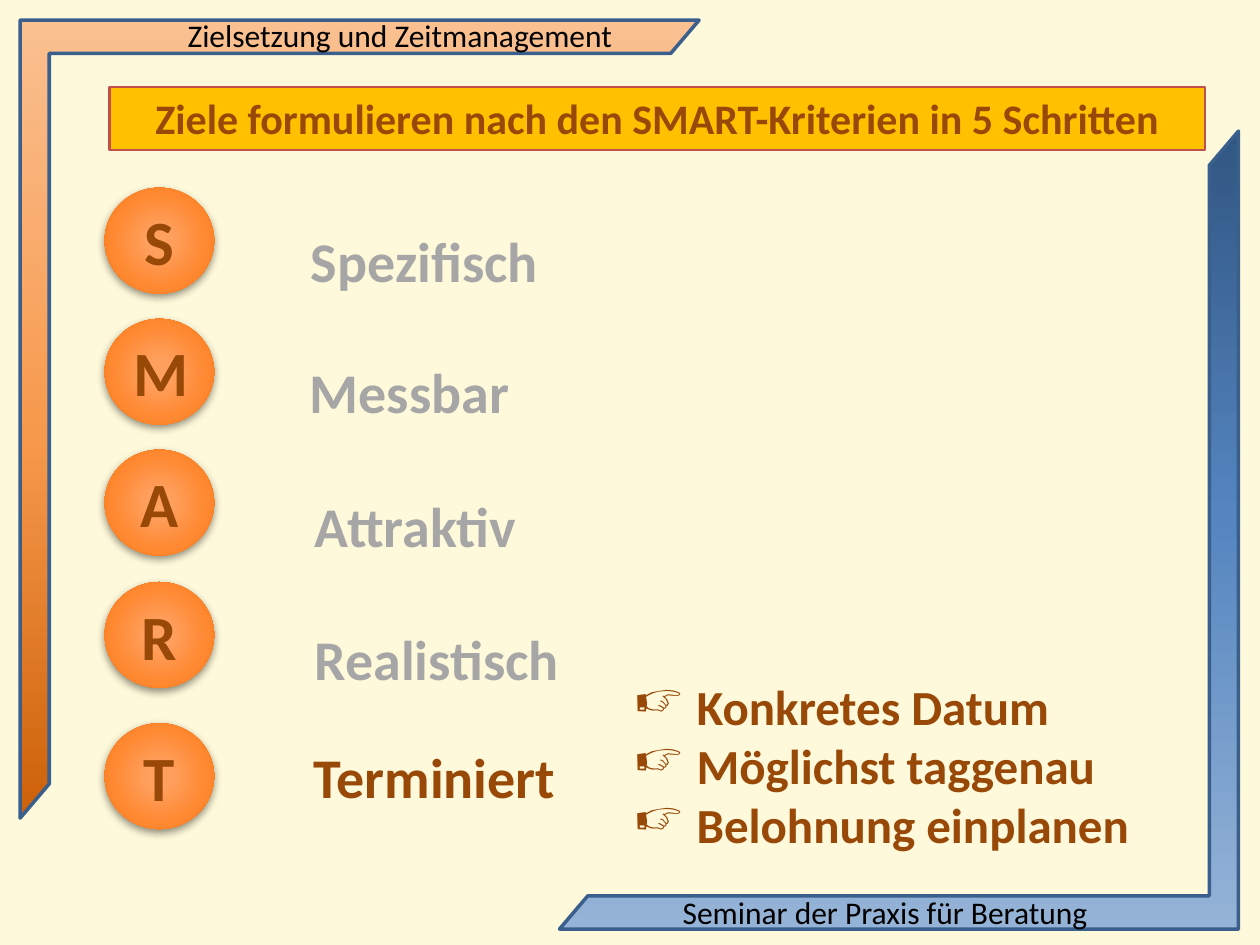
from lxml import etree
from pptx import Presentation
from pptx.dml.color import RGBColor
from pptx.enum.shapes import MSO_SHAPE
from pptx.enum.text import MSO_ANCHOR, MSO_AUTO_SIZE, PP_ALIGN
from pptx.oxml import parse_xml
from pptx.oxml.ns import nsdecls, qn
from pptx.util import Pt

HALF_FRAME, RECTANGLE, OVAL = MSO_SHAPE.HALF_FRAME, MSO_SHAPE.RECTANGLE, MSO_SHAPE.OVAL
TOP, MIDDLE = MSO_ANCHOR.TOP, MSO_ANCHOR.MIDDLE
GROW = MSO_AUTO_SIZE.SHAPE_TO_FIT_TEXT
LEFT, CENTER = PP_ALIGN.LEFT, PP_ALIGN.CENTER

BROWN, GREY, BLACK = "984807", "A6A6A6", "000000"
FRAME_LINE = "3A5F8C"
ORANGE_FADE = [(0, "CC6109"), (48, "F7994C"), (100, "FAC090")]
BLUE_FADE = [(0, "315683"), (48, "5485BF"), (100, "95B3D7")]
CIRCLE_FADE = [(0, "FFA061"), (15, "FFA05F"), (62, "FF8932"), (97, "FA7712"), (100, "FB7507")]
UPWARD = '<a:lin ang="16200000" scaled="0"/>'
RADIAL = ('<a:path path="circle"><a:fillToRect l="50000" t="50000" '
          'r="50000" b="50000"/></a:path>')

CRITERIA = [
    ("S", 107.3, "Spezifisch", (170.6, 126, 145.4, 46), GREY),
    ("M", 182.2, "Messbar", (169.9, 200.9, 129.6, 46), GREY),
    ("A", 257, "Attraktiv", (172.8, 277.2, 131.8, 46), GREY),
    ("R", 332.6, "Realistisch", (172.8, 353.5, 155.5, 46), GREY),
    ("T", 413.3, "Terminiert", (172.1, 420.5, 154, 46), BROWN),
]
DEADLINE_TIPS = ["Konkretes Datum", "Möglichst taggenau", "Belohnung einplanen"]


def color(value):
    return RGBColor.from_string(value)


def apply(target, formats):
    for attribute, value in formats.items():
        setattr(target, attribute, value)


def write(shape, lines, size, ink, bold=True, align=LEFT, frame_formats=None):
    frame = shape.text_frame
    apply(frame, frame_formats or {})
    for index, line in enumerate(lines):
        paragraph = frame.paragraphs[0] if index == 0 else frame.add_paragraph()
        paragraph.alignment = align
        run = paragraph.add_run()
        run.text = line
        apply(run.font, {"name": "Calibri", "size": Pt(size), "bold": bold})
        run.font.color.rgb = color(ink)
    return frame


def add_label(slide, box, lines, size, ink, bold=True, wrap=False):
    label = slide.shapes.add_textbox(*map(Pt, box))
    return write(label, lines, size, ink, bold,
                 frame_formats={"word_wrap": wrap, "auto_size": GROW})


def add_bullets(frame, symbol, indent):
    for paragraph in frame.paragraphs:
        properties = paragraph._p.get_or_add_pPr()
        properties.set("marL", str(Pt(indent)))
        properties.set("indent", str(-Pt(indent)))
        etree.SubElement(properties, qn("a:buChar")).set("char", symbol)


def add_outline(slide, kind, box, line=None, width=0):
    shape = slide.shapes.add_shape(kind, *map(Pt, box))
    shape.shadow.inherit = False
    if line:
        shape.line.color.rgb = color(line)
        shape.line.width = Pt(width)
    else:
        shape.line.fill.background()
    return shape


def fade(shape, stops, direction):
    shape.fill.gradient()
    old = shape.element.spPr.find(qn("a:gradFill"))
    marks = "".join(f'<a:gs pos="{position * 1000}"><a:srgbClr val="{value}"/></a:gs>'
                    for position, value in stops)
    new = parse_xml(f'<a:gradFill {nsdecls("a")} rotWithShape="1">'
                    f'<a:gsLst>{marks}</a:gsLst>{direction}</a:gradFill>')
    old.getparent().replace(old, new)


def cast_shadow(shape, blur, distance, opacity):
    effects = shape.element.spPr.find(qn("a:effectLst"))
    effects.append(parse_xml(
        f'<a:outerShdw {nsdecls("a")} blurRad="{Pt(blur)}" dist="{Pt(distance)}" '
        f'dir="5400000" rotWithShape="0"><a:srgbClr val="{BLACK}">'
        f'<a:alpha val="{opacity * 1000}"/></a:srgbClr></a:outerShdw>'))


def add_corner(slide, left, top, stops, rotation=0):
    corner = add_outline(slide, HALF_FRAME, (left, top, 388, 456), FRAME_LINE, 2)
    corner.rotation = rotation
    corner.adjustments[0], corner.adjustments[1] = 0.049, 0.043
    fade(corner, stops, UPWARD)


def add_title(slide, title):
    banner = add_outline(slide, RECTANGLE, (62.6, 49.5, 626, 36.3), "C0504D", 1.25)
    banner.fill.solid()
    banner.fill.fore_color.rgb = color("FFC000")
    write(banner, [title], 24, BROWN, align=CENTER,
          frame_formats={"vertical_anchor": TOP, "auto_size": GROW, "word_wrap": True})


def add_initial(slide, letter, top):
    circle = add_outline(slide, OVAL, (59.8, top, 62.6, 60.5))
    fade(circle, CIRCLE_FADE, RADIAL)
    cast_shadow(circle, 5, 2, 43)
    write(circle, [letter], 36, BROWN, align=CENTER,
          frame_formats={"vertical_anchor": MIDDLE})


def main():
    deck = Presentation()
    apply(deck, {"slide_width": Pt(720), "slide_height": Pt(540)})
    slide = deck.slides.add_slide(deck.slide_layouts[6])
    slide.background.fill.solid()
    slide.background.fill.fore_color.rgb = color("FEF9DA")

    add_corner(slide, 11.5, 11.5, ORANGE_FADE)
    add_corner(slide, 319.7, 74.9, BLUE_FADE, 180)
    add_label(slide, (100.1, 5.8, 260, 29), ["Zielsetzung und Zeitmanagement"], 18, BLACK, False)
    add_label(slide, (383, 507, 260.6, 29), ["Seminar der Praxis für Beratung"], 18, BLACK, False)
    add_title(slide, "Ziele formulieren nach den SMART-Kriterien in 5 Schritten")

    for letter, top, word, box, ink in CRITERIA:
        add_initial(slide, letter, top)
        add_label(slide, box, [word], 32, ink)

    tips = add_label(slide, (355, 383, 367.2, 108.7), DEADLINE_TIPS, 28, BROWN, wrap=True)
    add_bullets(tips, "☞", 36)
    deck.save("out.pptx")


if __name__ == "__main__":
    main()
